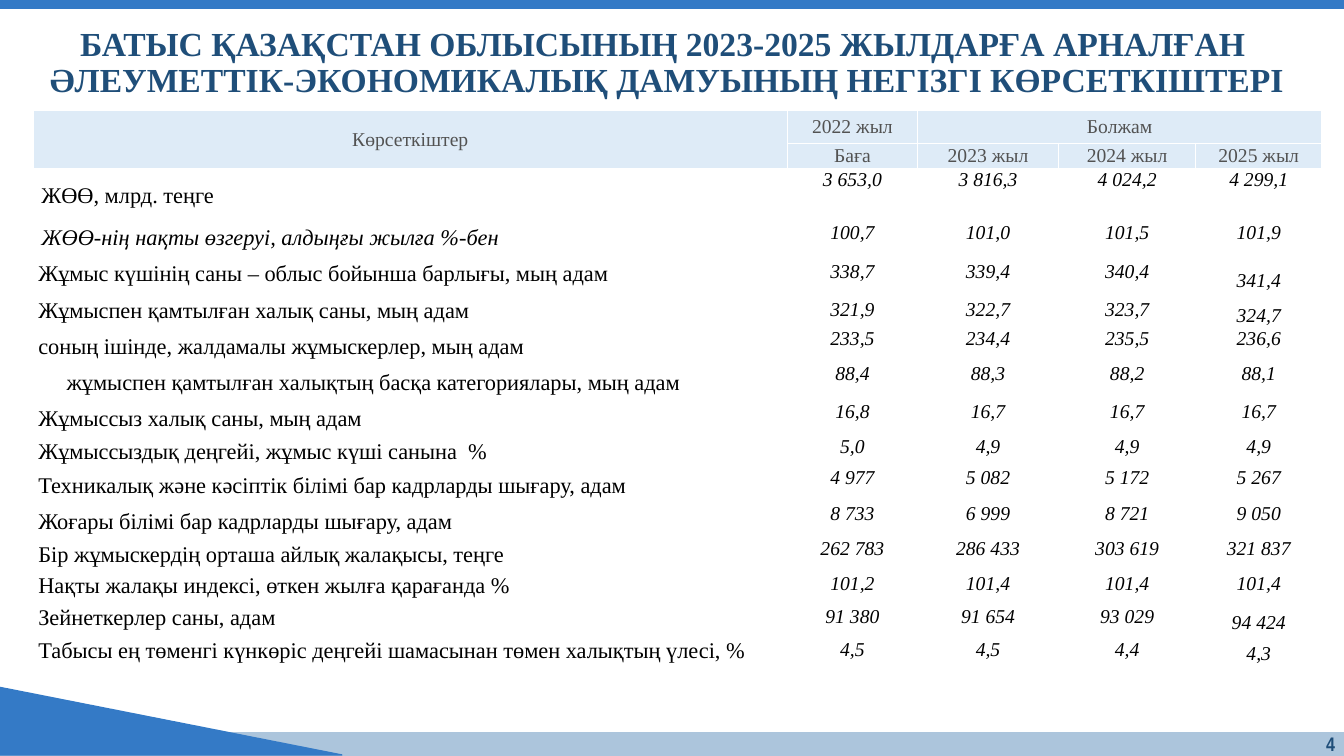
from dataclasses import dataclass

from lxml import etree
from pptx import Presentation
from pptx.dml.color import RGBColor
from pptx.enum.shapes import MSO_SHAPE
from pptx.enum.text import MSO_ANCHOR, PP_ALIGN
from pptx.oxml.ns import qn
from pptx.util import Inches, Pt

RECT, WEDGE = MSO_SHAPE.RECTANGLE, MSO_SHAPE.RIGHT_TRIANGLE
TOP, MID, LOW = MSO_ANCHOR.TOP, MSO_ANCHOR.MIDDLE, MSO_ANCHOR.BOTTOM
LEFT, CENTER, RIGHT = PP_ALIGN.LEFT, PP_ALIGN.CENTER, PP_ALIGN.RIGHT


@dataclass(frozen=True)
class Theme:
    serif: str = "Times New Roman"
    narrow: str = "Arial Narrow"
    navy: str = "1F4E79"
    blue: str = "347AC6"
    pale: str = "ACC5DC"
    head: str = "DEEBF7"
    gray: str = "525252"
    black: str = "000000"
    white: str = "FFFFFF"
    title: int = 24
    label: int = 16
    value: int = 14


THEME = Theme()


@dataclass(frozen=True)
class Style:
    size: int
    color: str
    face: str = THEME.serif
    bold: bool = False
    italic: bool = False
    align: PP_ALIGN = CENTER
    gap: float = 1.0


@dataclass(frozen=True)
class Band:
    kind: MSO_SHAPE
    box: tuple[float, float, float, float]
    color: str


@dataclass(frozen=True)
class Row:
    """Anchors: mid for the first three values, last for 2025."""
    height: float
    label: str
    values: tuple[str, ...]
    mid: MSO_ANCHOR = TOP
    last: MSO_ANCHOR = TOP
    inset: float = 0.05
    italic: bool = False


TITLE = Style(THEME.title, THEME.navy, bold=True, gap=0.9)
PAGE = Style(THEME.value, THEME.navy, THEME.narrow, bold=True, align=RIGHT, gap=0.9)
HEAD = Style(THEME.value, THEME.gray)
VALUE = Style(THEME.value, THEME.black, italic=True)

BANDS = (
    Band(RECT, (0, 7.27, 13.33, 0.23), THEME.pale),
    Band(WEDGE, (0, 6.82, 3.39, 0.67), THEME.blue),
    Band(RECT, (0, -0.02, 13.33, 0.1), THEME.blue),
)
COLS = (7.48, 1.29, 1.4, 1.36, 1.25)
HEADS = (
    (0.32, ("Көрсеткіштер", "2022 жыл", "Болжам", "", "")),
    (0.25, ("", "Баға", "2023 жыл", "2024 жыл", "2025 жыл")),
)
ROWS = (
    Row(0.52, "ЖӨӨ, млрд. теңге", ("3 653,0", "3 816,3", "4 024,2", "4 299,1"), inset=0.08),
    Row(0.28, "ЖӨӨ-нің нақты өзгеруі, алдыңғы жылға %-бен",
        ("100,7", "101,0", "101,5", "101,9"), inset=0.08, italic=True),
    Row(0.4, "Жұмыс күшінің саны – облыс бойынша барлығы, мың адам",
        ("338,7", "339,4", "340,4", "341,4"), MID, LOW),
    Row(0.35, "Жұмыспен қамтылған халық саны, мың адам",
        ("321,9", "322,7", "323,7", "324,7"), MID, LOW),
    Row(0.35, "соның ішінде, жалдамалы жұмыскерлер, мың адам",
        ("233,5", "234,4", "235,5", "236,6")),
    Row(0.37, "жұмыспен қамтылған халықтың басқа категориялары, мың адам",
        ("88,4", "88,3", "88,2", "88,1"), inset=0.33),
    Row(0.35, "Жұмыссыз халық саны, мың адам", ("16,8", "16,7", "16,7", "16,7")),
    Row(0.3, "Жұмыссыздық деңгейі, жұмыс күші санына  %", ("5,0", "4,9", "4,9", "4,9")),
    Row(0.36, "Техникалық және кәсіптік білімі бар кадрларды шығару, адам",
        ("4 977", "5 082", "5 172", "5 267")),
    Row(0.35, "Жоғары білімі бар кадрларды шығару, адам",
        ("8 733", "6 999", "8 721", "9 050")),
    Row(0.3, "Бір жұмыскердің орташа айлық жалақысы, теңге",
        ("262 783", "286 433", "303 619", "321 837")),
    Row(0.28, "Нақты жалақы индексi, өткен жылға қарағанда %",
        ("101,2", "101,4", "101,4", "101,4"), MID, MID),
    Row(0.34, "Зейнеткерлер саны, адам", ("91 380", "91 654", "93 029", "94 424"), MID, LOW),
    Row(0.27, "Табысы ең төменгі күнкөріс деңгейі шамасынан төмен халықтың үлесі, %",
        ("4,5", "4,5", "4,4", "4,3"), MID, LOW),
)


def write(frame, text: str, style: Style) -> None:
    frame.text = text
    for para in frame.paragraphs:
        para.alignment, para.line_spacing = style.align, style.gap
        font = para.font
        font.name, font.size = style.face, Pt(style.size)
        font.bold, font.italic = style.bold, style.italic
        font.color.rgb = RGBColor.from_string(style.color)


def add_band(slide, band: Band) -> None:
    shape = slide.shapes.add_shape(band.kind, *map(Inches, band.box))
    shape.shadow.inherit = False
    color = RGBColor.from_string(band.color)
    shape.fill.solid()
    shape.fill.fore_color.rgb = color
    shape.line.color.rgb = color
    shape.line.width = Pt(1)


def add_text(slide, box: tuple[float, ...], text: str, style: Style) -> None:
    frame = slide.shapes.add_textbox(*map(Inches, box)).text_frame
    frame.word_wrap = True
    frame.vertical_anchor = MID
    write(frame, text, style)


def fill_cell(cell, text: str, style: Style, anchor: MSO_ANCHOR,
              inset: tuple[float, ...]) -> None:
    """Inset runs left, top, right, bottom."""
    (cell.margin_left, cell.margin_top,
     cell.margin_right, cell.margin_bottom) = map(Inches, inset)
    cell.vertical_anchor = anchor
    write(cell.text_frame, text, style)
    cell.fill.background()


def shade(cell) -> None:
    """Give a heading cell its fill and white borders."""
    cell.fill.solid()
    cell.fill.fore_color.rgb = RGBColor.from_string(THEME.head)
    props = cell._tc.get_or_add_tcPr()
    for spot, side in enumerate(("lnL", "lnR", "lnT", "lnB")):
        line = etree.Element(qn(f"a:{side}"), w=str(Pt(1)))
        paint = etree.SubElement(line, qn("a:solidFill"))
        etree.SubElement(paint, qn("a:srgbClr"), val=THEME.white)
        props.insert(spot, line)


def add_grid(slide) -> None:
    highs = [high for high, _ in HEADS] + [row.height for row in ROWS]
    box = (0.33, 1.1, sum(COLS), sum(highs))
    table = slide.shapes.add_table(len(highs), len(COLS), *map(Inches, box)).table
    table.first_row = table.horz_banding = False
    for col, width in zip(table.columns, COLS):
        col.width = Inches(width)
    for line, high in zip(table.rows, highs):
        line.height = Inches(high)
    for r, (_, texts) in enumerate(HEADS):
        for c, text in enumerate(texts):
            fill_cell(table.cell(r, c), text, HEAD, MID, (0, 0, 0, 0))
            shade(table.cell(r, c))
    table.cell(0, 0).merge(table.cell(1, 0))
    table.cell(0, 2).merge(table.cell(0, 4))
    for r, row in enumerate(ROWS, len(HEADS)):
        style = Style(THEME.label, THEME.black, italic=row.italic, align=LEFT, gap=1.15)
        fill_cell(table.cell(r, 0), row.label, style, MID, (row.inset, 0, 0, 0))
        spots = (row.mid,) * 3 + (row.last,)
        for c, (text, spot) in enumerate(zip(row.values, spots), 1):
            fill_cell(table.cell(r, c), text, VALUE, spot, (0.01, 0.01, 0.01, 0))


def main() -> None:
    deck = Presentation()
    deck.slide_width, deck.slide_height = Inches(13.33), Inches(7.5)
    slide = deck.slides.add_slide(deck.slide_layouts[6])
    for band in BANDS:
        add_band(slide, band)
    add_text(slide, (0.16, 0.28, 12.91, 0.7),
             "БАТЫС ҚАЗАҚСТАН ОБЛЫСЫНЫҢ 2023-2025 ЖЫЛДАРҒА АРНАЛҒАН \n"
             "ӘЛЕУМЕТТІК-ЭКОНОМИКАЛЫҚ ДАМУЫНЫҢ НЕГІЗГІ КӨРСЕТКІШТЕРІ", TITLE)
    add_grid(slide)
    add_text(slide, (12.62, 7.26, 0.72, 0.27), "4", PAGE)
    deck.save("out.pptx")


if __name__ == "__main__":
    main()
